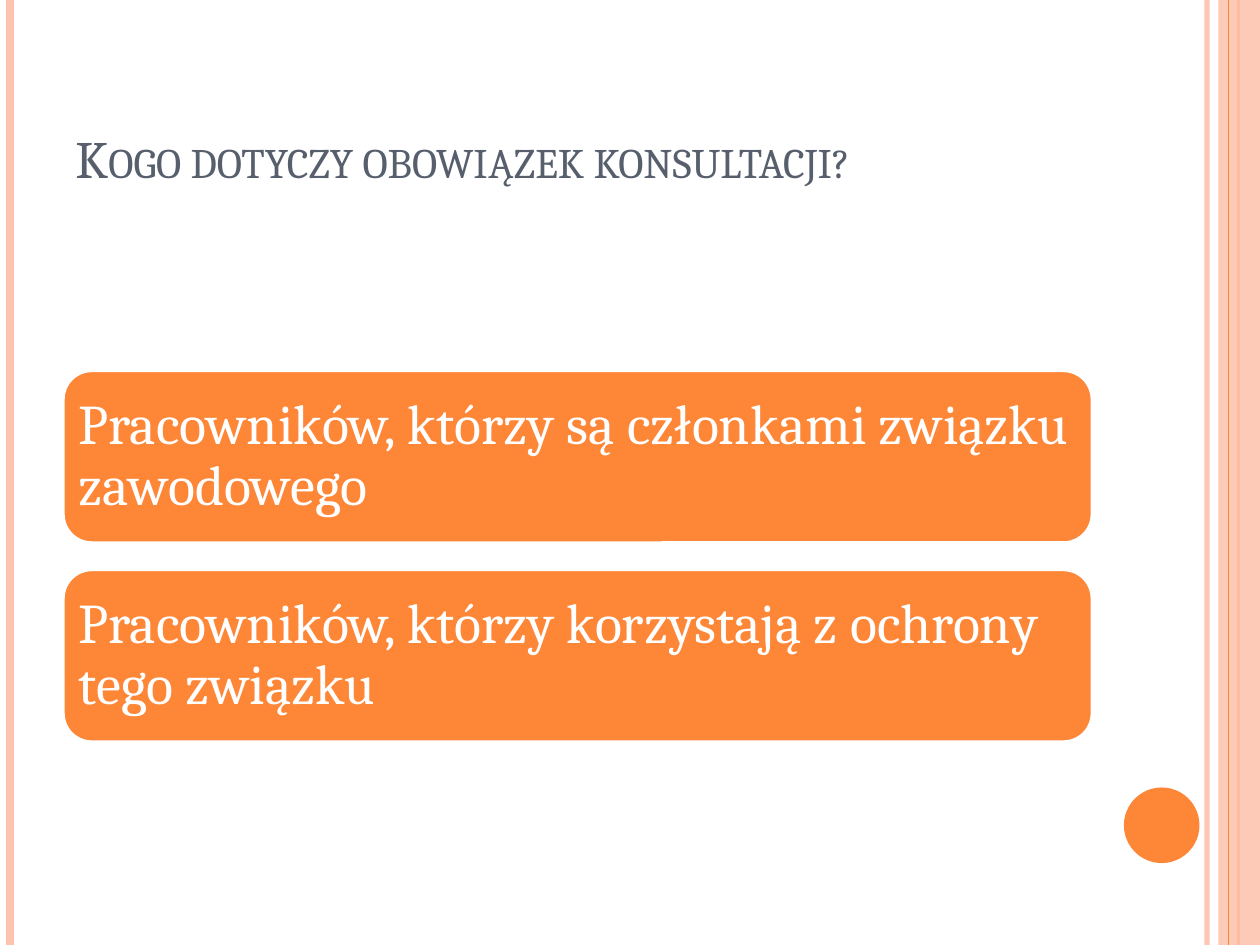
import dataclasses

import lxml.etree
import pptx
import pptx.dml.color
import pptx.enum.shapes
import pptx.enum.text
import pptx.oxml.ns
import pptx.util

Inches = pptx.util.Inches
Pt = pptx.util.Pt
Shapes = pptx.enum.shapes.MSO_SHAPE
Anchor = pptx.enum.text.MSO_ANCHOR
qn = pptx.oxml.ns.qn


@dataclasses.dataclass(frozen=True)
class Theme:
    """Colours, font and type sizes of the slide."""

    orange: str = "FE8637"
    peach: str = "FEC3AE"
    slate: str = "575F6D"
    white: str = "FFFFFF"
    font: str = "Cambria"
    title_size: int = 30
    card_size: int = 32


THEME = Theme()


def rgb(colour):
    """Turn a hex string into a colour."""
    return pptx.dml.color.RGBColor.from_string(colour)


def set_values(target, values):
    """Set each named attribute on the target."""
    for name, value in values.items():
        setattr(target, name, value)


def set_opacity(shape, percent):
    """Make the solid colour of a shape or line partly transparent."""
    colour = next(shape._element.spPr.iter(qn("a:srgbClr")))
    lxml.etree.SubElement(colour, qn("a:alpha"), val=str(percent * 1000))


def add_rule(page, left, top, height, colour, width):
    """Draw a vertical rule."""
    rule = page.shapes.add_connector(
        pptx.enum.shapes.MSO_CONNECTOR.STRAIGHT,
        Inches(left), Inches(top), Inches(left), Inches(top + height))
    rule.line.color.rgb = rgb(colour)
    rule.line.width = Pt(width)
    lxml.etree.SubElement(rule._element.spPr, qn("a:effectLst"))
    return rule


def add_solid(page, kind, left, top, width, height, colour):
    """Draw a filled shape without outline or shadow."""
    shape = page.shapes.add_shape(
        kind, Inches(left), Inches(top), Inches(width), Inches(height))
    shape.shadow.inherit = False
    shape.fill.solid()
    shape.fill.fore_color.rgb = rgb(colour)
    shape.line.fill.background()
    return shape


def write_text(box, text, size, colour, frame_values, line_spacing=1.0):
    """Write one left-aligned paragraph into a box and return its span."""
    frame = box.text_frame
    set_values(frame, {"word_wrap": True, **frame_values})
    para = frame.paragraphs[0]
    set_values(para, {"alignment": pptx.enum.text.PP_ALIGN.LEFT,
                      "line_spacing": line_spacing})
    span = para.add_run()
    span.text = text
    set_values(span.font, {"name": THEME.font, "size": Pt(size)})
    span.font.color.rgb = rgb(colour)
    return span


def add_frame(page, left, top, width, height):
    """Draw the side rules, the right band and the corner disc."""
    right = left + width
    inner = add_rule(page, right - 0.42, top, height, THEME.peach, 3)
    set_opacity(inner, 93)
    add_rule(page, left + 0.08, top, height, THEME.peach, 4.5)
    add_rule(page, right - 0.17, top, height, THEME.orange, 1.5)
    band = add_solid(page, Shapes.RECTANGLE, right - 0.33, top, 0.33, height,
                     THEME.peach)
    set_opacity(band, 87)
    add_rule(page, right - 0.25, top, height, THEME.orange, 0.75)
    add_solid(page, Shapes.OVAL, right - 1.08, top + height - 1.25, 0.6, 0.6,
              THEME.orange)


def add_title(page, left, top, width, height, text):
    """Write the title in small capitals at the foot of its box."""
    box = page.shapes.add_textbox(
        Inches(left), Inches(top), Inches(width), Inches(height))
    span = write_text(box, text, THEME.title_size, THEME.slate,
                      {"vertical_anchor": Anchor.BOTTOM})
    span.font._element.set("cap", "small")


def add_cards(page, left, top, width, height, texts, gap=0.21):
    """Stack equal rounded cards in the box."""
    card_height = (height - gap * (len(texts) - 1)) / len(texts)
    margins = dict.fromkeys(
        ("margin_left", "margin_right", "margin_top", "margin_bottom"),
        Inches(0.06))
    for index, text in enumerate(texts):
        card = add_solid(page, Shapes.ROUNDED_RECTANGLE, left,
                         top + index * (card_height + gap), width,
                         card_height, THEME.orange)
        card.line.color.rgb = rgb(THEME.white)
        card.line.width = Pt(2)
        write_text(card, text, THEME.card_size, THEME.white,
                   {"vertical_anchor": Anchor.MIDDLE, **margins}, 0.9)


def main():
    """Build and save the slide."""
    deck = pptx.Presentation()
    set_values(deck, {"slide_width": Inches(10), "slide_height": Inches(7.5)})
    page = deck.slides.add_slide(deck.slide_layouts[6])
    add_frame(page, 0, 0, 10, 7.5)
    add_title(page, 0.5, 0.3, 8.17, 1.25,
              "Kogo dotyczy obowiązek konsultacji?")
    add_cards(page, 0.5, 2.94, 8.17, 2.95, [
        "Pracowników, którzy są członkami związku zawodowego",
        "Pracowników, którzy korzystają z ochrony tego związku",
    ])
    deck.save("out.pptx")


if __name__ == "__main__":
    main()
